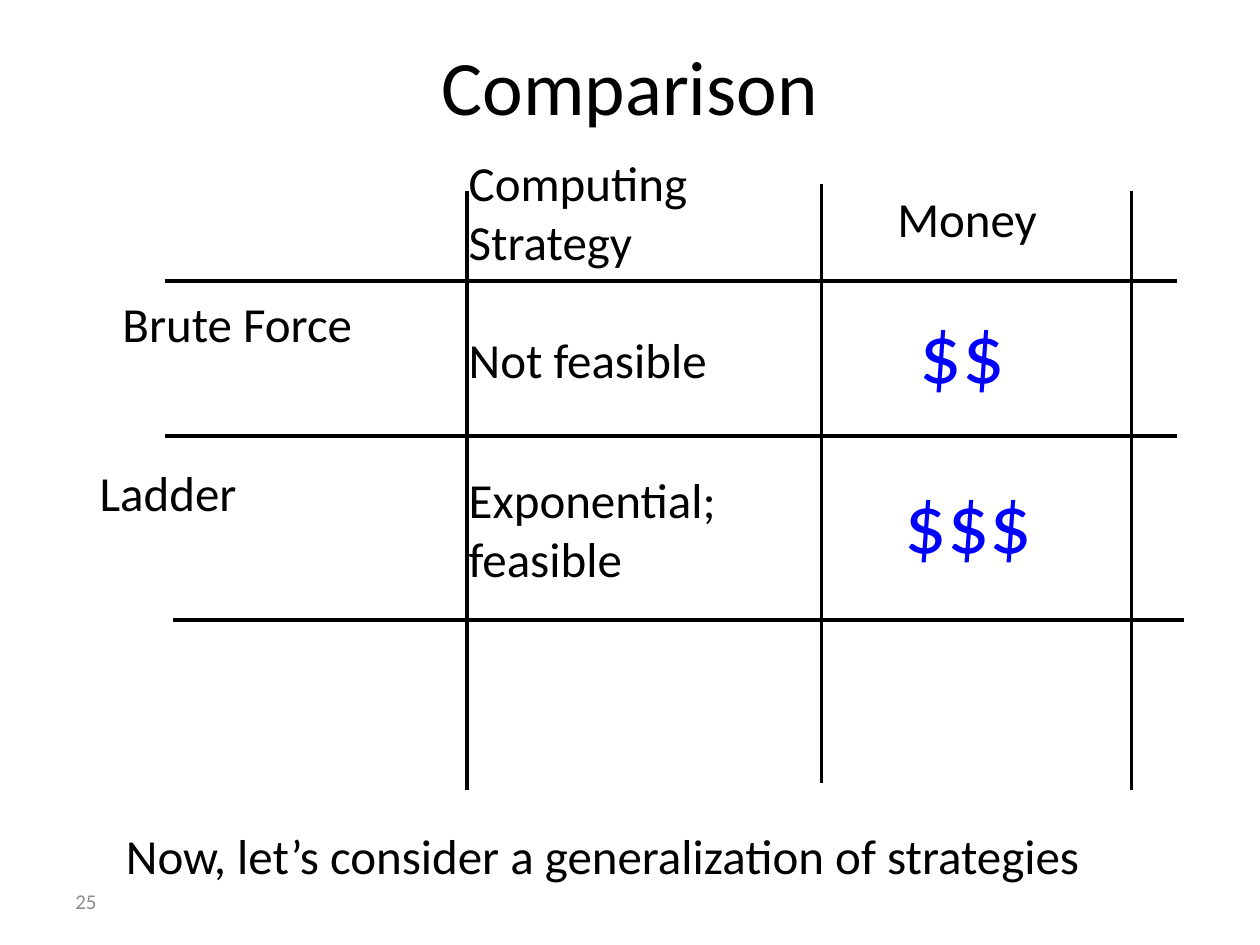
from lxml.etree import SubElement
from pptx import Presentation
from pptx.dml.color import RGBColor
from pptx.enum.shapes import MSO_CONNECTOR
from pptx.enum.text import MSO_ANCHOR, PP_ALIGN
from pptx.oxml.ns import qn
from pptx.util import Cm, Pt

deck = Presentation()
deck.slide_width, deck.slide_height = Cm(25.4), Cm(19.05)
slide = deck.slides.add_slide(deck.slide_layouts[6])


def paint(color, code):
    color.rgb = RGBColor.from_string(code)


def write(text, box, size=28, color="000000", align=PP_ALIGN.LEFT,
          anchor=MSO_ANCHOR.TOP, inset=(0.18, 0.1)):
    """Place text in a box given in cm as left, top, width, height."""
    frame = slide.shapes.add_textbox(*map(Cm, box)).text_frame
    frame.word_wrap = True
    frame.vertical_anchor = anchor
    frame.margin_left = frame.margin_right = Cm(inset[0])
    frame.margin_top = frame.margin_bottom = Cm(inset[1])
    line = frame.paragraphs[0]
    line.alignment = align
    run = line.add_run()
    run.text = text
    run.font.name = "Calibri"
    run.font.size = Pt(size)
    paint(run.font.color, color)


wide = (0.25, 0.13)
write("Comparison", (1.27, 0.38, 22.86, 2.67), size=44,
      align=PP_ALIGN.CENTER, anchor=MSO_ANCHOR.MIDDLE, inset=wide)
write("25", (1.27, 17.65, 5.92, 1.02), size=12, color="8C8C8C",
      anchor=MSO_ANCHOR.MIDDLE, inset=wide)

# Grid rules: columns as (x, top), rows as (left, y)
tall, long = 12.07, 20.39
cols = [(9.42, 3.86), (16.56, 3.71), (22.81, 3.86)]
rows = [(3.33, 5.66), (3.33, 8.79), (3.48, 12.5)]
rules = [(x, y, x, y + tall) for x, y in cols]
rules += [(x, y, x + long, y) for x, y in rows]
for ends in rules:
    rule = slide.shapes.add_connector(MSO_CONNECTOR.STRAIGHT, *map(Cm, ends))
    rule.line.width = Pt(2.25)
    paint(rule.line.color, "000000")
    SubElement(rule._element.spPr, qn("a:effectLst"))

# Strategy column
left = 9.27
write("Computing Strategy", (left, 2.97, 7.9, 2.57))
write("Not feasible", (left, 6.55, 7.29, 1.37))
write("Exponential; feasible", (left, 9.37, 7.29, 2.57))

# Row names
write("Brute Force", (2.29, 5.82, 6.99, 2.57))
write("Ladder", (1.83, 9.22, 7.29, 2.57))

# Money column
write("Money", (17.91, 3.71, 3.71, 1.37))
write("$$", (18.36, 5.94, 2.82, 4.29), size=48, color="0000FF")
write("$$$", (18.06, 9.37, 3.43, 2.24), size=48, color="0000FF")

write("Now, let’s consider a generalization of strategies",
      (2.29, 16.51, 21.44, 1.45), inset=wide)

deck.save("out.pptx")
